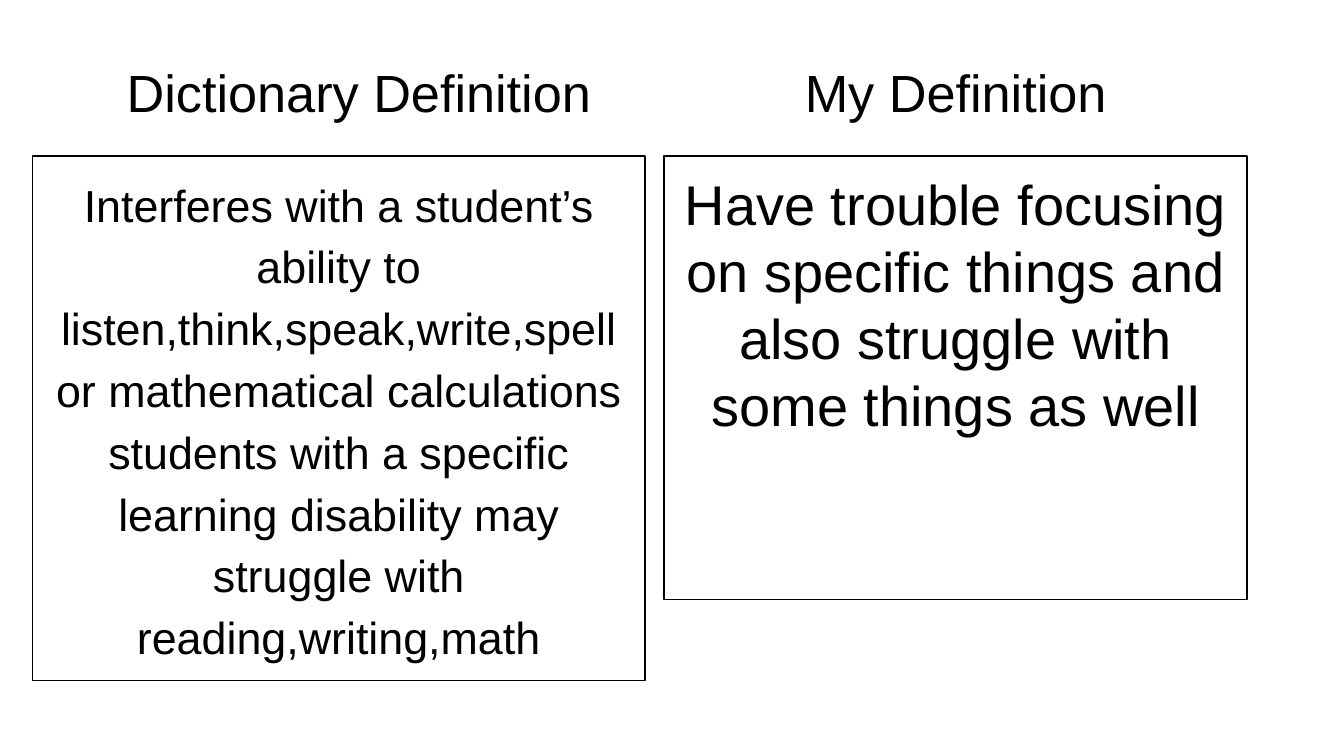
from pptx import Presentation
from pptx.dml.color import RGBColor
from pptx.enum.shapes import MSO_SHAPE as Shape
from pptx.enum.text import MSO_ANCHOR as Anchor, MSO_AUTO_SIZE as AutoSize, PP_ALIGN as Align
from pptx.oxml.ns import qn
from pptx.util import Cm, Pt

BLACK = RGBColor(0x00, 0x00, 0x00)
FONT = "Arial"
INSET = Cm(0.25)

# Content
LEFT_HEADING = "Dictionary Definition"
RIGHT_HEADING = "My Definition"
LEFT_DEFINITION = (
    "Interferes with a student’s ability to listen,think,speak,write,spell "
    "or mathematical calculations students with a specific learning "
    "disability may struggle with reading,writing,math"
)
RIGHT_DEFINITION = (
    "Have trouble focusing on specific things and also struggle with "
    "some things as well"
)

# Layout in cm
HEADING_TOP, HEADING_HEIGHT = 0.89, 1.6
BOX_TOP = 2.95
COLUMN_WIDTH = 11.58


def place(box, left, top, width, height):
    box.left, box.top, box.width, box.height = map(Cm, (left, top, width, height))


def write(box, text, size, line_spacing=1.0, space_after=0):
    frame = box.text_frame
    frame.word_wrap = True
    frame.auto_size = AutoSize.NONE
    frame.vertical_anchor = Anchor.TOP
    frame.margin_left = frame.margin_right = INSET
    frame.margin_top = frame.margin_bottom = INSET
    para = frame.paragraphs[0]
    para.alignment = Align.CENTER
    para.line_spacing = line_spacing
    para.space_before = Pt(0)
    para.space_after = Pt(space_after)
    # No bullet or hanging indent
    properties = para._p.get_or_add_pPr()
    properties.set("marL", "0")
    properties.set("indent", "0")
    properties.append(properties.makeelement(qn("a:buNone"), {}))
    span = para.add_run()
    span.text = text
    span.font.name = FONT
    span.font.size = Pt(size)
    span.font.color.rgb = BLACK


def outline(box):
    box.fill.background()
    box.line.color.rgb = BLACK
    box.line.width = Pt(0.75)


deck = Presentation()
deck.slide_width, deck.slide_height = Cm(25.4), Cm(14.29)
page = deck.slides.add_slide(deck.slide_layouts[3])
left_heading, left_box, right_heading = page.placeholders

# Headings
for heading, text, left in (
    (left_heading, LEFT_HEADING, 0.99),
    (right_heading, RIGHT_HEADING, 12.27),
):
    place(heading, left, HEADING_TOP, COLUMN_WIDTH, HEADING_HEIGHT)
    write(heading, text, 28)

# Dictionary definition
place(left_box, 0.61, BOX_TOP, COLUMN_WIDTH, 9.91)
outline(left_box)
write(left_box, LEFT_DEFINITION, 24, line_spacing=1.15, space_after=16)

# Own definition
right_box = page.shapes.add_shape(
    Shape.RECTANGLE, Cm(12.55), Cm(BOX_TOP), Cm(11.02), Cm(8.38)
)
right_box.shadow.inherit = False
outline(right_box)
write(right_box, RIGHT_DEFINITION, 30)

deck.save("out.pptx")
